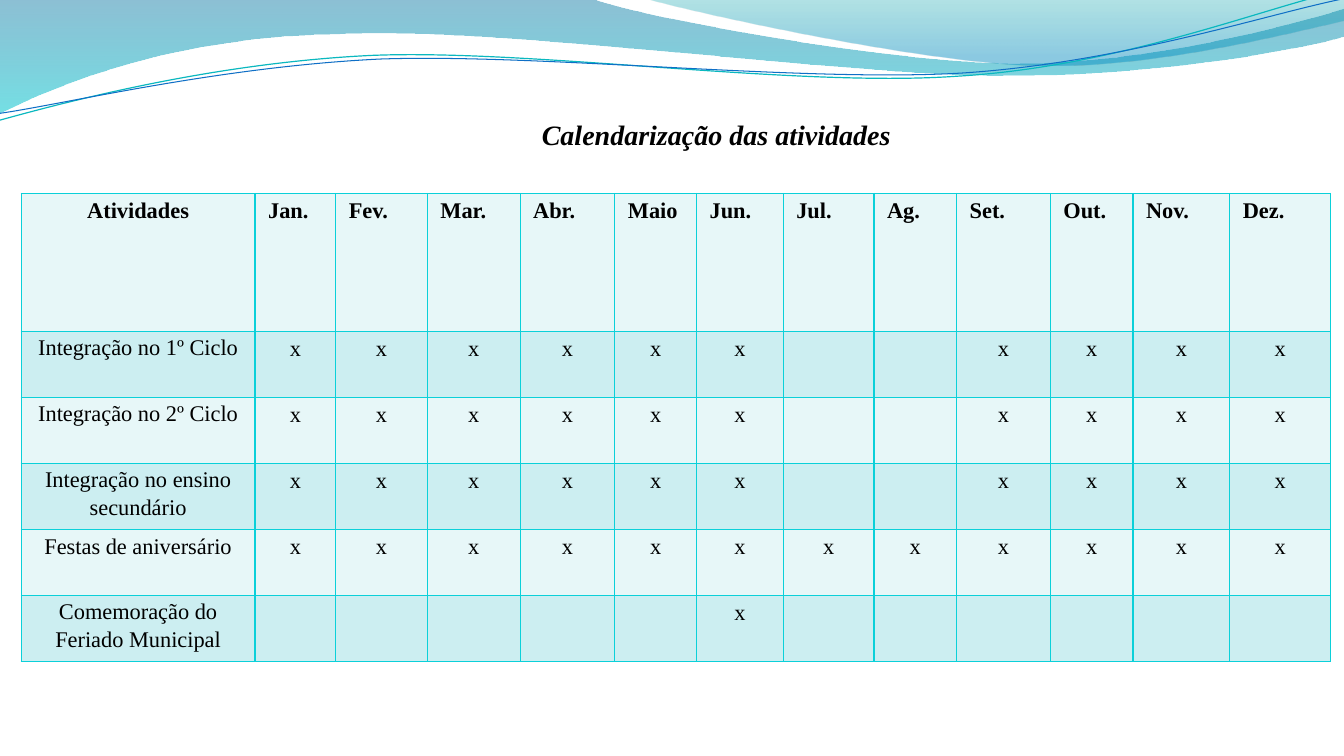
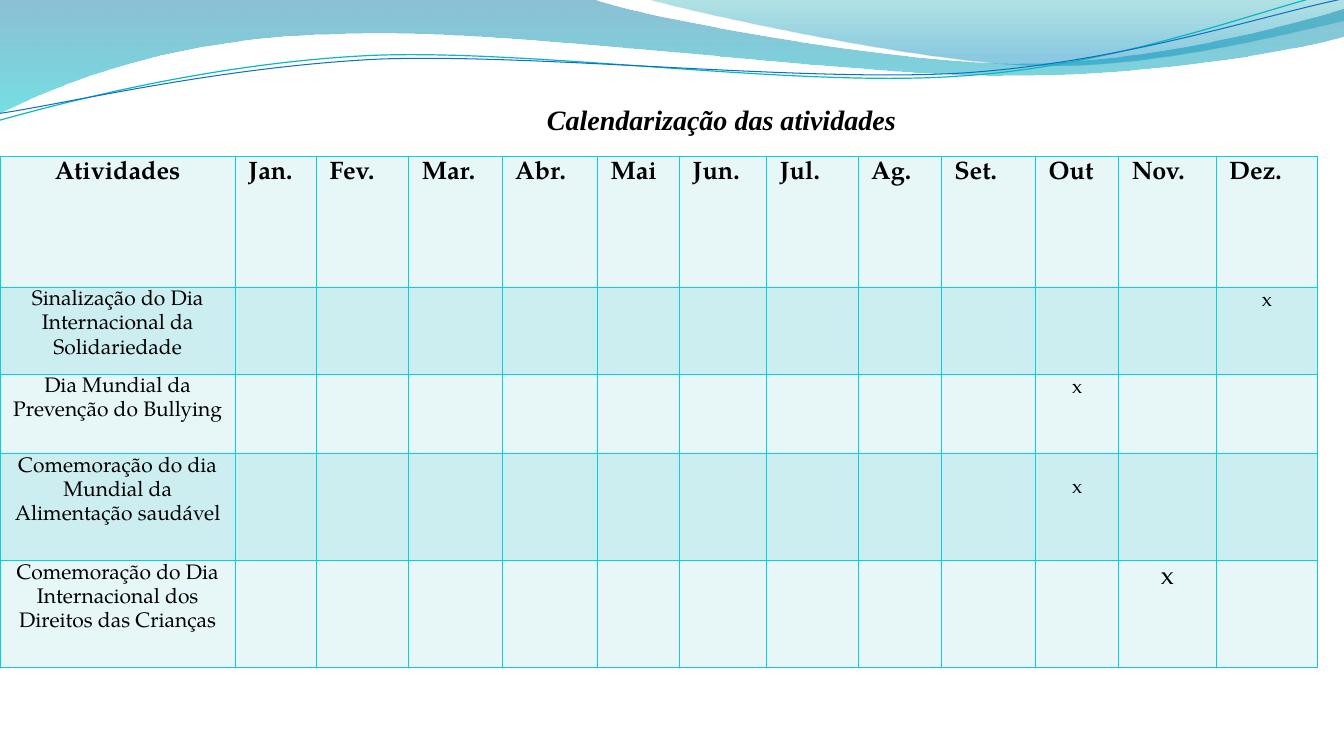
from dataclasses import dataclass

from lxml.etree import SubElement
from pptx import Presentation
from pptx.dml.color import RGBColor
from pptx.enum.text import MSO_ANCHOR, MSO_AUTO_SIZE, PP_ALIGN
from pptx.oxml.ns import qn
from pptx.util import Inches, Pt

BLACK = RGBColor(0x00, 0x00, 0x00)
BORDER = RGBColor(0x0B, 0xD0, 0xD9)
BAND_FILLS = (RGBColor(0xE7, 0xF7, 0xF8), RGBColor(0xCC, 0xEE, 0xF1))
DEEP_BLUE = RGBColor(0x00, 0x74, 0xA1)
CYAN = RGBColor(0x00, 0xC6, 0xCF)
TEAL = RGBColor(0x00, 0xA1, 0xA9)
SKY_BLUE = RGBColor(0x00, 0x8B, 0xBF)
TEAL_LINE = RGBColor(0x0A, 0xB8, 0xBF)
BLUE_LINE = RGBColor(0x0F, 0x6F, 0xC6)

SERIF = "Times New Roman"
PAGELLA = "TeX Gyre Pagella"
TITLE = "Calendarização das atividades "
COLUMN_WIDTHS = (2.32, 0.8, 0.91, 0.92, 0.94, 0.81, 0.86, 0.9, 0.82, 0.93, 0.82, 0.96, 1)
SCHOOL_MONTHS = (1, 2, 3, 4, 5, 6, 9, 10, 11, 12)
EVEN_ROW = (4.64 - 1.37) / 5
LINE_ROTATION = 357.3


@dataclass(frozen=True)
class GradientStop:
    position: float
    color: RGBColor
    opacity: int


@dataclass(frozen=True)
class Wave:
    """An outline of line (x, y) and Bézier (three points) segments, in inches."""
    start: tuple[float, float]
    segments: tuple[tuple[float, ...], ...]
    stops: tuple[GradientStop, ...] = ()
    line_color: RGBColor | None = None
    line_width: float = 0


@dataclass(frozen=True)
class Activity:
    label: str
    months: tuple[int, ...]
    height: float = EVEN_ROW
    mark_size: int = 16
    label_top: float = 0
    mark_top: float = 0.05


@dataclass(frozen=True)
class Calendar:
    title_frame: tuple[float, float, float, float]
    left: float
    top: float
    width: float
    header_height: float
    months: tuple[str, ...]
    font: str
    header_size: int
    label_size: int
    activities: tuple[Activity, ...]


WAVES = (
    Wave((0, 0), (
        (5.87, -0.01),
        (6.34, 0.17, 8.85, 0.63, 10.11, 0.63),
        (11.38, 0.63, 12.78, 0.26, 13.33, 0.09),
        (13.35, 0.36),
        (13.11, 0.44, 11.6, 0.76, 9.94, 0.75),
        (8.29, 0.75, 5.09, 0.28, 3.43, 0.34),
        (1.72, 0.36, 0.61, 0.83, -0.01, 1.13),
        (0, 0),
    ), stops=(GradientStop(0, DEEP_BLUE, 45), GradientStop(1, CYAN, 55))),
    Wave((6.39, -0.01), (
        (6.79, 0.11, 9.09, 0.62, 10.25, 0.65),
        (11.41, 0.69, 12.82, 0.32, 13.33, 0.21),
        (13.33, 0),
        (6.39, -0.01),
    ), stops=(GradientStop(0, TEAL, 30), GradientStop(0.8, SKY_BLUE, 45))),
    Wave((-0.03, 0.88), (
        (0.63, 0.73, 2.11, 0.41, 3.69, 0.41),
        (5.28, 0.42, 7.88, 0.93, 9.49, 0.89),
        (11.09, 0.87, 12.54, 0.36, 13.33, 0.22),
    ), line_color=TEAL_LINE, line_width=0.85),
    Wave((-0.02, 0.81), (
        (0.62, 0.75, 2.18, 0.45, 3.78, 0.45),
        (5.37, 0.47, 7.95, 0.88, 9.54, 0.86),
        (11.14, 0.83, 12.57, 0.42, 13.36, 0.3),
    ), line_color=BLUE_LINE, line_width=0.75),
)

CALENDARS = (
    Calendar(
        title_frame=(3.73, 1.07, 6.82, 0.49),
        left=0.21, top=1.92, width=12.99, header_height=1.37,
        months=("Jan.", "Fev.", "Mar.", "Abr.", "Maio", "Jun.",
                "Jul.", "Ag.", "Set.", "Out.", "Nov.", "Dez."),
        font=SERIF, header_size=16, label_size=16,
        activities=(
            Activity("Integração no 1º Ciclo", SCHOOL_MONTHS),
            Activity("Integração no 2º Ciclo", SCHOOL_MONTHS),
            Activity("Integração no ensino secundário", SCHOOL_MONTHS),
            Activity("Festas de aniversário", tuple(range(1, 13)), label_top=0.05),
            Activity("Comemoração do Feriado Municipal", (6,)),
        ),
    ),
    Calendar(
        title_frame=(3.62, 0.92, 7.14, 0.49),
        left=0, top=1.55, width=13.07, header_height=1.3,
        months=("Jan.", "Fev.", "Mar.", "Abr.", "Mai", "Jun.",
                "Jul.", "Ag.", "Set.", "Out", "Nov.", "Dez."),
        font=PAGELLA, header_size=18, label_size=15,
        activities=(
            Activity("Sinalização do Dia Internacional da Solidariedade", (12,), 0.81, 14),
            Activity("Dia Mundial da Prevenção do Bullying", (10,), 0.79, 14),
            Activity("Comemoração do dia Mundial da Alimentação saudável", (10,), 1.06, 14,
                     mark_top=0.25),
            Activity("Comemoração do Dia Internacional dos Direitos das Crianças", (11,), 1.06, 18),
        ),
    ),
)


def write_text(frame, text: str, *, font: str, size: int, bold: bool = False,
               italic: bool = False, align=PP_ALIGN.CENTER, loose: bool = False) -> None:
    """Fill the frame with one paragraph; loose adds line spacing and space after."""
    frame.word_wrap = True
    para = frame.paragraphs[0]
    para.alignment = align
    if loose:
        para.line_spacing = 1.15
        para.space_after = Pt(10)
    span = para.add_run()
    span.text = text
    span.font.name = font
    span.font.size = Pt(size)
    span.font.bold = bold
    span.font.italic = italic
    span.font.color.rgb = BLACK


def build_outline(page, wave: Wave):
    """Build the outline through all points, then turn each point triple into a curve."""
    builder = page.shapes.build_freeform(*map(Inches, wave.start), scale=1.0)
    builder.add_line_segments(
        [(Inches(x), Inches(y)) for segment in wave.segments
         for x, y in zip(segment[::2], segment[1::2])],
        close=bool(wave.stops))
    shape = builder.convert_to_shape()
    lines = iter(list(shape._element.iter(qn("a:lnTo"))))
    for segment in wave.segments:
        first = next(lines)
        if len(segment) == 6:
            first.tag = qn("a:cubicBezTo")
            for _ in range(2):
                control = next(lines)
                first.append(control[0])
                control.getparent().remove(control)
    return shape


def draw_wave(page, wave: Wave):
    shape = build_outline(page, wave)
    shape.shadow.inherit = False
    if not wave.stops:
        shape.rotation = LINE_ROTATION
        shape.fill.background()
        shape.line.color.rgb = wave.line_color
        shape.line.width = Pt(wave.line_width)
        return shape
    shape.line.fill.background()
    shape.fill.gradient()
    shape.fill.gradient_angle = 270
    for stop, setting in zip(shape.fill.gradient_stops, wave.stops):
        stop.position = setting.position
        stop.color.rgb = setting.color
    for color, setting in zip(shape._element.iter(qn("a:srgbClr")), wave.stops):
        SubElement(color, qn("a:alpha")).set("val", str(setting.opacity * 1000))
    return shape


def decorate_layout(layout, page) -> None:
    """Draw the waves on the page, then move them behind the layout's title."""
    for holder in list(layout.placeholders)[1:]:
        holder._element.getparent().remove(holder._element)
    for position, wave in enumerate(WAVES, start=2):
        layout.shapes._spTree.insert(position, draw_wave(page, wave)._element)


def style_cell(cell, fill: RGBColor, top: float = 0.05) -> None:
    cell.margin_left = cell.margin_right = Inches(0.13)
    cell.margin_top = Inches(top)
    cell.margin_bottom = Inches(min(top, 0.05))
    cell.vertical_anchor = MSO_ANCHOR.TOP
    properties = cell._tc.get_or_add_tcPr()
    for side in ("a:lnL", "a:lnR", "a:lnT", "a:lnB"):
        border = SubElement(properties, qn(side), w=str(Pt(1)))
        solid = SubElement(border, qn("a:solidFill"))
        SubElement(solid, qn("a:srgbClr"), val=str(BORDER))
    cell.fill.solid()
    cell.fill.fore_color.rgb = fill


def draw_title(page, frame: tuple[float, float, float, float]) -> None:
    title = page.shapes.title
    title.left, title.top, title.width, title.height = map(Inches, frame)
    write_text(title.text_frame, TITLE, font=SERIF, size=20, bold=True, italic=True, loose=True)
    title.text_frame.vertical_anchor = MSO_ANCHOR.TOP
    title.text_frame.auto_size = MSO_AUTO_SIZE.SHAPE_TO_FIT_TEXT


def draw_table(page, calendar: Calendar) -> None:
    heights = [calendar.header_height] + [activity.height for activity in calendar.activities]
    table = page.shapes.add_table(
        len(heights), len(COLUMN_WIDTHS), Inches(calendar.left), Inches(calendar.top),
        Inches(calendar.width), Inches(sum(heights))).table
    table.first_row = table.horz_banding = False
    scale = calendar.width / sum(COLUMN_WIDTHS)
    for column, width in zip(table.columns, COLUMN_WIDTHS):
        column.width = Inches(width * scale)
    for row, height in zip(table.rows, heights):
        row.height = Inches(height)

    for index, heading in enumerate(("Atividades", *calendar.months)):
        cell = table.cell(0, index)
        style_cell(cell, BAND_FILLS[0])
        write_text(cell.text_frame, heading, font=calendar.font, size=calendar.header_size,
                   bold=True, align=PP_ALIGN.LEFT if index else PP_ALIGN.CENTER)

    for row_index, activity in enumerate(calendar.activities, start=1):
        fill = BAND_FILLS[row_index % 2]
        label = table.cell(row_index, 0)
        style_cell(label, fill, activity.label_top)
        write_text(label.text_frame, activity.label, font=calendar.font,
                   size=calendar.label_size, loose=activity.label_top == 0)
        for month in range(1, len(COLUMN_WIDTHS)):
            cell = table.cell(row_index, month)
            marked = month in activity.months
            style_cell(cell, fill, activity.mark_top if marked else 0.05)
            if marked:
                write_text(cell.text_frame, "x", font=calendar.font, size=activity.mark_size)


def main() -> None:
    deck = Presentation()
    deck.slide_width, deck.slide_height = Inches(13.33), Inches(7.5)
    layout = deck.slide_layouts.get_by_name("Title Only")
    pages = [deck.slides.add_slide(layout) for _ in CALENDARS]
    decorate_layout(layout, pages[0])
    for page, calendar in zip(pages, CALENDARS):
        draw_title(page, calendar.title_frame)
        draw_table(page, calendar)
    deck.save("out.pptx")


if __name__ == "__main__":
    main()
